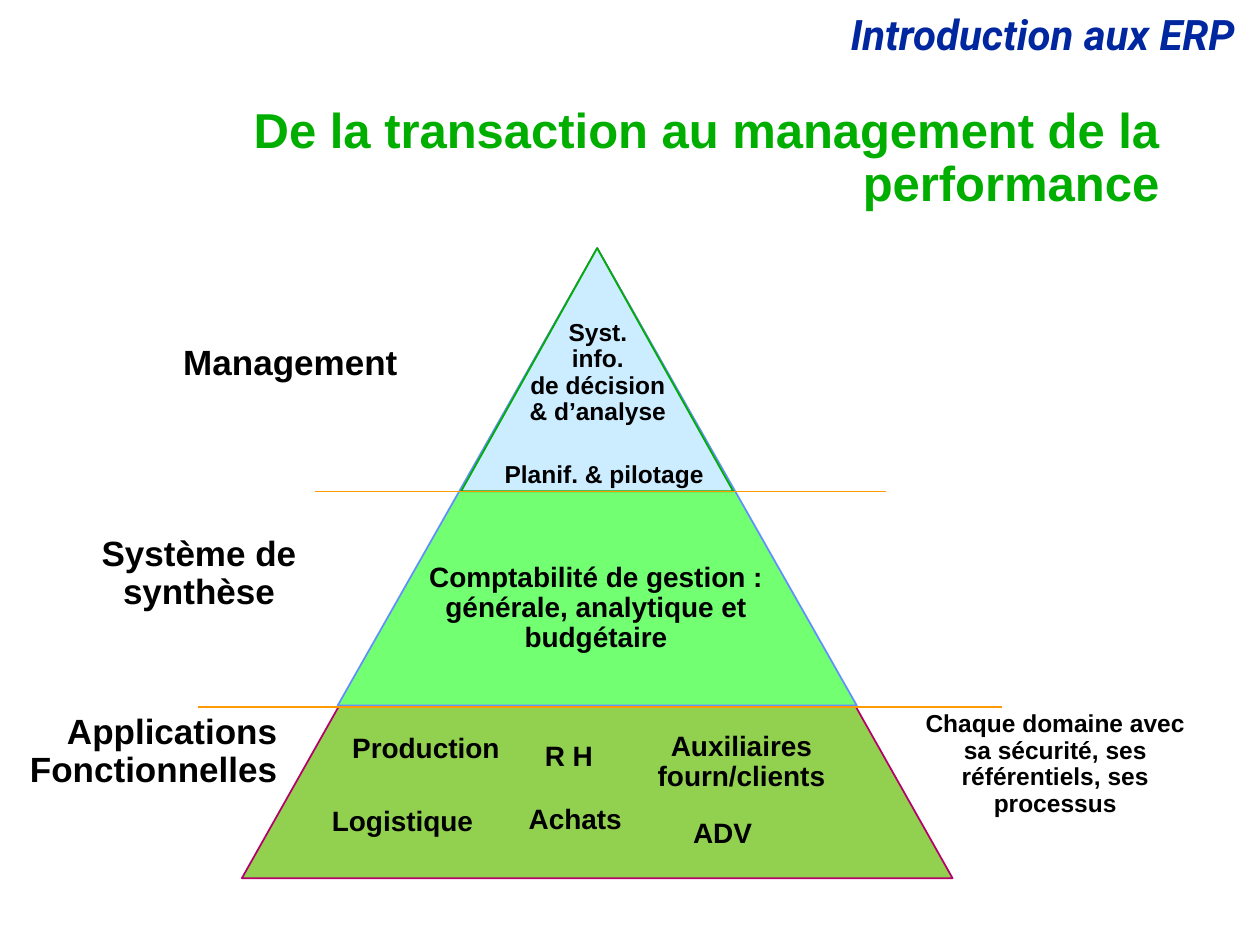
"""Builds the slide with the ERP pyramid, from transactions to performance management."""
from lxml.etree import SubElement
from pptx import Presentation
from pptx.dml.color import RGBColor
from pptx.enum.shapes import MSO_CONNECTOR, MSO_SHAPE
from pptx.enum.text import MSO_ANCHOR, MSO_AUTO_SIZE, PP_ALIGN
from pptx.oxml.ns import qn
from pptx.util import Inches, Pt

COLORS = {
    "header": "00279F", "title": "00AE00", "text": "000000", "divider": "FE9B03",
    "base": "92D050", "base_edge": "B50069",
    "middle": "72FF72", "middle_edge": "618FFD",
    "top": "CCECFF", "top_edge": "00AE00",
}
HEADER = "Introduction aux ERP"
TITLE = "De la transaction au management de la performance"
APEX = (4.74, 1.97)
LEVELS = [("base", 5.64, 5.0), ("middle", 4.12, 3.63), ("top", 2.16, 1.93)]
DIVIDERS = [(2.5, 7.03, 3.9), (1.57, 7.95, 5.61)]
LINE_HEIGHT = 0.0151
PADDING = 0.1

LEVEL_NAMES = [
    (["Management"], 1.35, 2.69, 1.91, PP_ALIGN.CENTER),
    (["Système de", "synthèse"], 0.7, 4.21, 1.76, PP_ALIGN.CENTER),
    (["Applications", "Fonctionnelles"], 0.12, 5.62, 2.18, PP_ALIGN.RIGHT),
]
APPLICATIONS = [
    (["Comptabilité de gestion :", "générale, analytique et", "budgétaire"], 3.29, 4.42, 2.88),
    (["Production"], 2.69, 5.78, 1.38),
    (["R H"], 4.22, 5.84, 0.59),
    (["Auxiliaires", "fourn/clients"], 5.11, 5.76, 1.55),
    (["Logistique"], 2.53, 6.36, 1.33),
    (["Achats"], 4.09, 6.34, 0.95),
    (["ADV"], 5.4, 6.45, 0.67),
]
DECISION = [
    (["Syst.", "info.", "de décision", "& d’analyse"], 4.1, 2.49, 1.29),
    (["Planif. & pilotage"], 3.9, 3.62, 1.79),
]
REMARK = "Chaque domaine avec sa sécurité, ses référentiels, ses processus"


def color(name):
    return RGBColor.from_string(COLORS[name])


def format_paragraph(paragraph, size, color_name, alignment, font_name="Arial"):
    paragraph.alignment = alignment
    paragraph.line_spacing = 0.9
    font = paragraph.font
    font.name, font.size, font.bold = font_name, Pt(size), True
    font.color.rgb = color(color_name)


def add_label(slide, lines, left, top, width, size, alignment=PP_ALIGN.CENTER,
              rows=None, color_name="text", font_name="Arial"):
    height = (rows or len(lines)) * size * LINE_HEIGHT + PADDING
    box = slide.shapes.add_textbox(*map(Inches, (left, top, width, height)))
    frame = box.text_frame
    frame.word_wrap = rows is not None
    frame.text = "\n".join(lines)
    for paragraph in frame.paragraphs:
        format_paragraph(paragraph, size, color_name, alignment, font_name)
    return box


def add_title(slide):
    title = slide.shapes.title
    title.left, title.top, title.width, title.height = map(Inches, (1.38, 1.23, 7.92, 0.5))
    frame = title.text_frame
    frame.text = TITLE
    frame.auto_size = MSO_AUTO_SIZE.NONE
    frame.vertical_anchor = MSO_ANCHOR.BOTTOM
    format_paragraph(frame.paragraphs[0], 28, "title", PP_ALIGN.RIGHT)


def add_level(slide, name, width, height):
    center, top = APEX
    triangle = slide.shapes.add_shape(
        MSO_SHAPE.ISOSCELES_TRIANGLE,
        *map(Inches, (center - width / 2, top, width, height)))
    triangle.shadow.inherit = False
    triangle.fill.solid()
    triangle.fill.fore_color.rgb = color(name)
    triangle.line.color.rgb = color(name + "_edge")
    triangle.line.width = Pt(1)


def add_divider(slide, start, end, height):
    divider = slide.shapes.add_connector(
        MSO_CONNECTOR.STRAIGHT, *map(Inches, (start, height, end, height)))
    divider.line.color.rgb = color("divider")
    divider.line.width = Pt(1)
    SubElement(divider._element.spPr, qn("a:effectLst"))


def main():
    presentation = Presentation()
    presentation.slide_width, presentation.slide_height = Inches(10), Inches(7.5)
    slide = presentation.slides.add_slide(presentation.slide_layouts[5])

    header = add_label(slide, [HEADER], 2.32, 0.06, 7.58, 24, PP_ALIGN.RIGHT,
                       rows=1, color_name="header", font_name="Roboto")
    header.text_frame.paragraphs[0].font.italic = True
    add_title(slide)
    for level in LEVELS:
        add_level(slide, *level)
    for divider in DIVIDERS:
        add_divider(slide, *divider)
    for lines, left, top, width, alignment in LEVEL_NAMES:
        add_label(slide, lines, left, top, width, 20, alignment)
    for size, labels in ((16, APPLICATIONS), (14, DECISION)):
        for label in labels:
            add_label(slide, *label, size)
    add_label(slide, [REMARK], 7.14, 5.6, 2.47, 14, rows=4)

    presentation.save("out.pptx")


if __name__ == "__main__":
    main()
